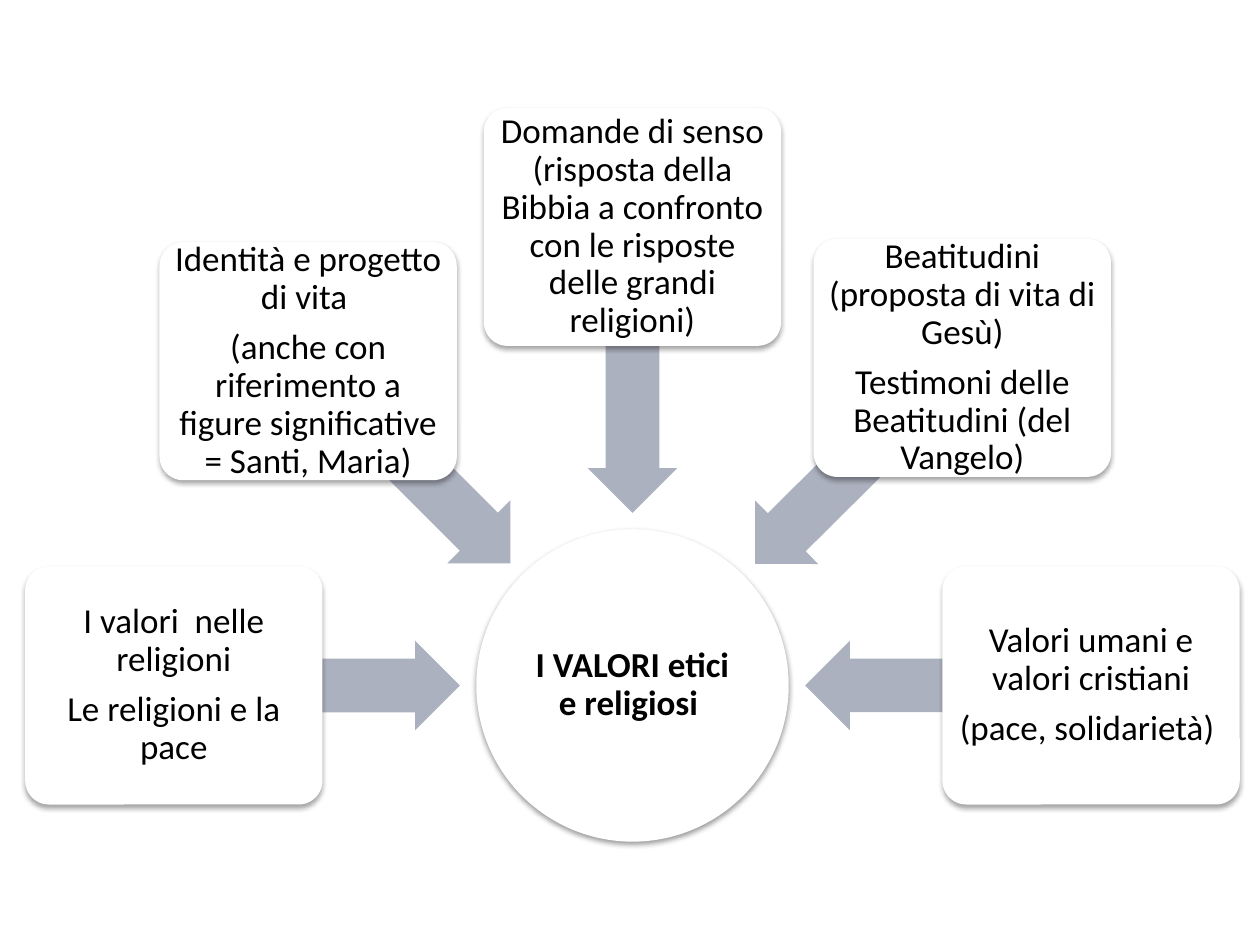
"""Build a slide of five themes whose arrows converge on a central circle of values."""
from math import cos, radians, sin

from lxml.etree import SubElement
from pptx import Presentation
from pptx.dml.color import RGBColor
from pptx.enum.shapes import MSO_SHAPE as Shape
from pptx.enum.text import MSO_ANCHOR as Anchor, PP_ALIGN as Align
from pptx.oxml.ns import qn
from pptx.util import Inches, Pt

HUB_TEXT = ["I VALORI etici e religiosi "]
THEMES = [
    (180, 3.64, ["I valori  nelle religioni", "Le religioni e la pace"]),
    (225, 3.64, ["Identità e progetto di vita ",
                 "(anche con riferimento a figure significative = Santi, Maria)"]),
    (270, 3.64, ["Domande di senso (risposta della Bibbia a confronto "
                 "con le risposte delle grandi religioni)"]),
    (315.2, 3.69, ["Beatitudini (proposta di vita di Gesù)",
                   "Testimoni delle Beatitudini (del Vangelo)"]),
    (0, 3.64, ["Valori umani e valori cristiani", "(pace, solidarietà) "]),
]

CENTER_X, CENTER_Y = 5.02, 5.44
HUB_SIZE = 2.48
THEME_WIDTH, THEME_HEIGHT = 2.36, 1.89
ARROW_START, ARROW_HEIGHT = 1.37, 0.71
WHITE, GREY, BLACK = "FFFFFF", "ACB1BF", "000000"
PARAGRAPH_FORMAT = {"alignment": Align.CENTER, "line_spacing": 0.9, "space_after": Pt(7)}
FONT_FORMAT = {"name": "Calibri", "size": Pt(20)}


def color(hex_code):
    return RGBColor.from_string(hex_code)


def apply(target, values):
    for name, value in values.items():
        setattr(target, name, value)


def add_part(slide, preset, angle, radius, width, height, fill, adjustments=()):
    x = CENTER_X + radius * cos(radians(angle))
    y = CENTER_Y + radius * sin(radians(angle))
    part = slide.shapes.add_shape(preset, Inches(x - width / 2), Inches(y - height / 2),
                                  Inches(width), Inches(height))
    for index, value in enumerate(adjustments):
        part.adjustments[index] = value
    part.shadow.inherit = False
    part.fill.solid()
    part.fill.fore_color.rgb = color(fill)
    part.line.fill.background()
    return part


def add_shadow(part, opacity, distance):
    effects = part._element.spPr.find(qn("a:effectLst"))
    shadow = SubElement(effects, qn("a:outerShdw"), blurRad=str(Pt(3.1)),
                        dist=str(Pt(distance)), dir="5400000", rotWithShape="0")
    tint = SubElement(shadow, qn("a:srgbClr"), val=BLACK)
    SubElement(tint, qn("a:alpha"), val=str(opacity * 1000))


def write(part, lines, margin, bold=False):
    frame = part.text_frame
    sides = ("left", "right", "top", "bottom")
    apply(frame, {f"margin_{side}": Inches(margin) for side in sides})
    apply(frame, {"word_wrap": True, "vertical_anchor": Anchor.MIDDLE})
    for index, line in enumerate(lines):
        paragraph = frame.add_paragraph() if index else frame.paragraphs[0]
        apply(paragraph, PARAGRAPH_FORMAT)
        run = paragraph.add_run()
        run.text = line
        apply(run.font, {**FONT_FORMAT, "bold": bold})
        run.font.color.rgb = color(BLACK)


def main():
    deck = Presentation()
    apply(deck, {"slide_width": Inches(10), "slide_height": Inches(7.5)})
    slide = deck.slides.add_slide(deck.slide_layouts[6])

    hub = add_part(slide, Shape.OVAL, 0, 0, HUB_SIZE, HUB_SIZE, WHITE)
    add_shadow(hub, 38, 1.6)
    write(hub, HUB_TEXT, 0.01, bold=True)

    for angle, radius, lines in THEMES:
        arrow = add_part(slide, Shape.LEFT_ARROW, angle, (ARROW_START + radius) / 2,
                         radius - ARROW_START, ARROW_HEIGHT, GREY, (0.6, 0.5))
        arrow.rotation = angle
        theme = add_part(slide, Shape.ROUNDED_RECTANGLE, angle, radius,
                         THEME_WIDTH, THEME_HEIGHT, WHITE, (0.1,))
        add_shadow(theme, 35, 1.8)
        write(theme, lines, 0.04)

    deck.save("out.pptx")


if __name__ == "__main__":
    main()
